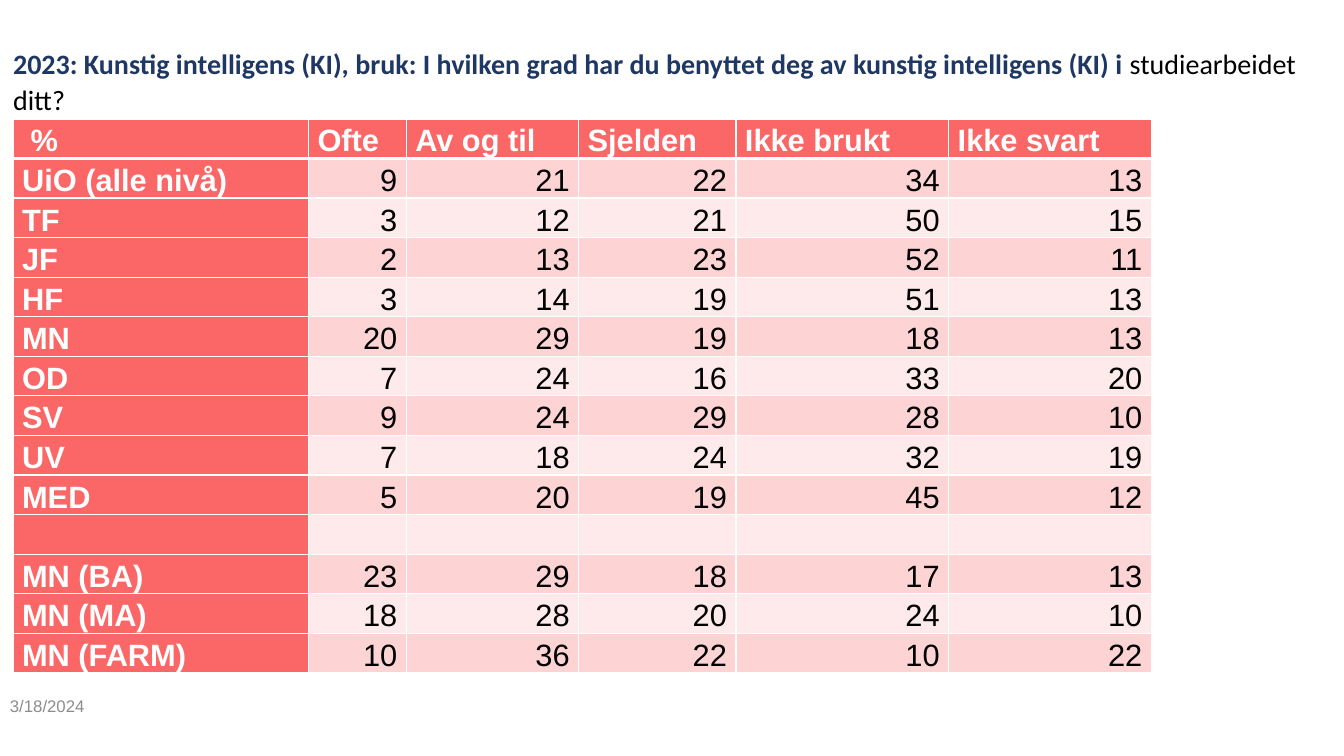
import dataclasses

import pptx
import pptx.dml.color
import pptx.enum.text
import pptx.oxml
import pptx.oxml.ns
import pptx.util

PX = 9144  # EMU per px, 100 px to the inch
WHITE, BLACK, NAVY, GREY = "FFFFFF", "000000", "1F3763", "8C8C8C"
CORAL, BANDS = "FB6666", ("FDD3D3", "FEEAEA")
ANCHOR = pptx.enum.text.MSO_ANCHOR
ALIGN = pptx.enum.text.PP_ALIGN


@dataclasses.dataclass
class Style:
    size: int
    font: str
    color: str
    bold: bool = False


@dataclasses.dataclass
class Answers:
    unit: str
    shares: tuple[int, ...] = ()


HEADERS = (" %", "Ofte", "Av og til", "Sjelden", "Ikke brukt", "Ikke svart")
COL_WIDTHS = (293, 97, 171, 156, 211, 201)
TABLE_HEIGHT = 549
ROWS = (
    Answers("UiO (alle nivå)", (9, 21, 22, 34, 13)),
    Answers("TF", (3, 12, 21, 50, 15)),
    Answers("JF", (2, 13, 23, 52, 11)),
    Answers("HF", (3, 14, 19, 51, 13)),
    Answers("MN", (20, 29, 19, 18, 13)),
    Answers("OD", (7, 24, 16, 33, 20)),
    Answers("SV", (9, 24, 29, 28, 10)),
    Answers("UV", (7, 18, 24, 32, 19)),
    Answers("MED", (5, 20, 19, 45, 12)),
    Answers(""),
    Answers("MN (BA)", (23, 29, 18, 17, 13)),
    Answers("MN (MA)", (18, 28, 20, 24, 10)),
    Answers("MN (FARM)", (10, 36, 22, 10, 22)),
)
LABEL = Style(22, "Arial", WHITE, True)
VALUE = Style(22, "Arial", BLACK)


def emu(px: int) -> int:
    return px * PX


def rgb(color: str) -> pptx.dml.color.RGBColor:
    return pptx.dml.color.RGBColor.from_string(color)


def format_run(r, style: Style) -> None:
    r.font.size = pptx.util.Pt(style.size)
    r.font.name = style.font
    r.font.bold = style.bold
    r.font.color.rgb = rgb(style.color)


def set_margins(box, x: int, top: int = 0) -> None:
    box.margin_left = box.margin_right = emu(x)
    box.margin_top, box.margin_bottom = emu(top), 0


def add_borders(cell, top: int, bottom: int) -> None:
    tc_pr = cell._tc.get_or_add_tcPr()
    for side, width in (("L", 1), ("R", 1), ("T", top), ("B", bottom)):
        tc_pr.append(pptx.oxml.parse_xml(
            f'<a:ln{side} {pptx.oxml.ns.nsdecls("a")} w="{pptx.util.Pt(width)}">'
            f'<a:solidFill><a:srgbClr val="{WHITE}"/></a:solidFill></a:ln{side}>'))


def fill_cell(cell, text: str, row: int, is_label: bool) -> None:
    set_margins(cell, 9)
    cell.vertical_anchor = ANCHOR.BOTTOM
    add_borders(cell, 3 if row == 1 else 1, 3 if row == 0 else 1)
    cell.fill.solid()
    cell.fill.fore_color.rgb = rgb(CORAL if is_label else BANDS[(row - 1) % 2])
    p = cell.text_frame.paragraphs[0]
    p.text = text
    p.alignment = ALIGN.LEFT if is_label else ALIGN.RIGHT
    p.line_spacing = 1.07
    p.space_after = pptx.util.Pt(8)
    for r in p.runs:
        format_run(r, LABEL if is_label else VALUE)


def add_title(s) -> None:
    sp = s.shapes.title
    sp.left, sp.top, sp.width, sp.height = map(emu, (13, 41, 1280, 58))
    tf = sp.text_frame
    set_margins(tf, 0, 3)
    tf.word_wrap = True
    tf.auto_size = pptx.enum.text.MSO_AUTO_SIZE.NONE
    tf.vertical_anchor = ANCHOR.TOP
    p = tf.paragraphs[0]
    p.alignment = ALIGN.LEFT
    p.line_spacing = 1.07
    for text, style in (
        ("2023: Kunstig intelligens (KI), bruk: I hvilken grad har du benyttet "
         "deg av kunstig intelligens (KI) i ", Style(20, "Calibri", NAVY, True)),
        ("studiearbeidet ditt?", Style(20, "Calibri", BLACK)),
    ):
        r = p.add_run()
        r.text = text
        format_run(r, style)


def add_date(s) -> None:
    tf = s.shapes.add_textbox(*map(emu, (0, 685, 127, 30))).text_frame
    tf.word_wrap = True
    tf.vertical_anchor = ANCHOR.MIDDLE
    tf.text = "3/18/2024"
    tf.paragraphs[0].space_after = pptx.util.Pt(6)
    format_run(tf.paragraphs[0].runs[0], Style(12, "Arial", GREY))


def add_answer_table(s) -> None:
    n_rows = len(ROWS) + 1
    table = s.shapes.add_table(
        n_rows, len(HEADERS), emu(13), emu(118),
        emu(sum(COL_WIDTHS)), emu(TABLE_HEIGHT)).table
    table.first_col = True
    for column, width in zip(table.columns, COL_WIDTHS):
        column.width = emu(width)
    for row in table.rows:
        row.height = emu(TABLE_HEIGHT) // n_rows

    # Header row, then one row per unit
    for j, header in enumerate(HEADERS):
        fill_cell(table.cell(0, j), header, 0, True)
    for i, answers in enumerate(ROWS, 1):
        fill_cell(table.cell(i, 0), answers.unit, i, True)
        shares = answers.shares or ("",) * (len(HEADERS) - 1)
        for j, share in enumerate(shares, 1):
            fill_cell(table.cell(i, j), str(share), i, False)


def main() -> None:
    prs = pptx.Presentation()
    prs.slide_width, prs.slide_height = emu(1333), emu(750)
    s = prs.slides.add_slide(prs.slide_layouts[5])
    add_title(s)
    add_date(s)
    add_answer_table(s)
    prs.save("out.pptx")


if __name__ == "__main__":
    main()
